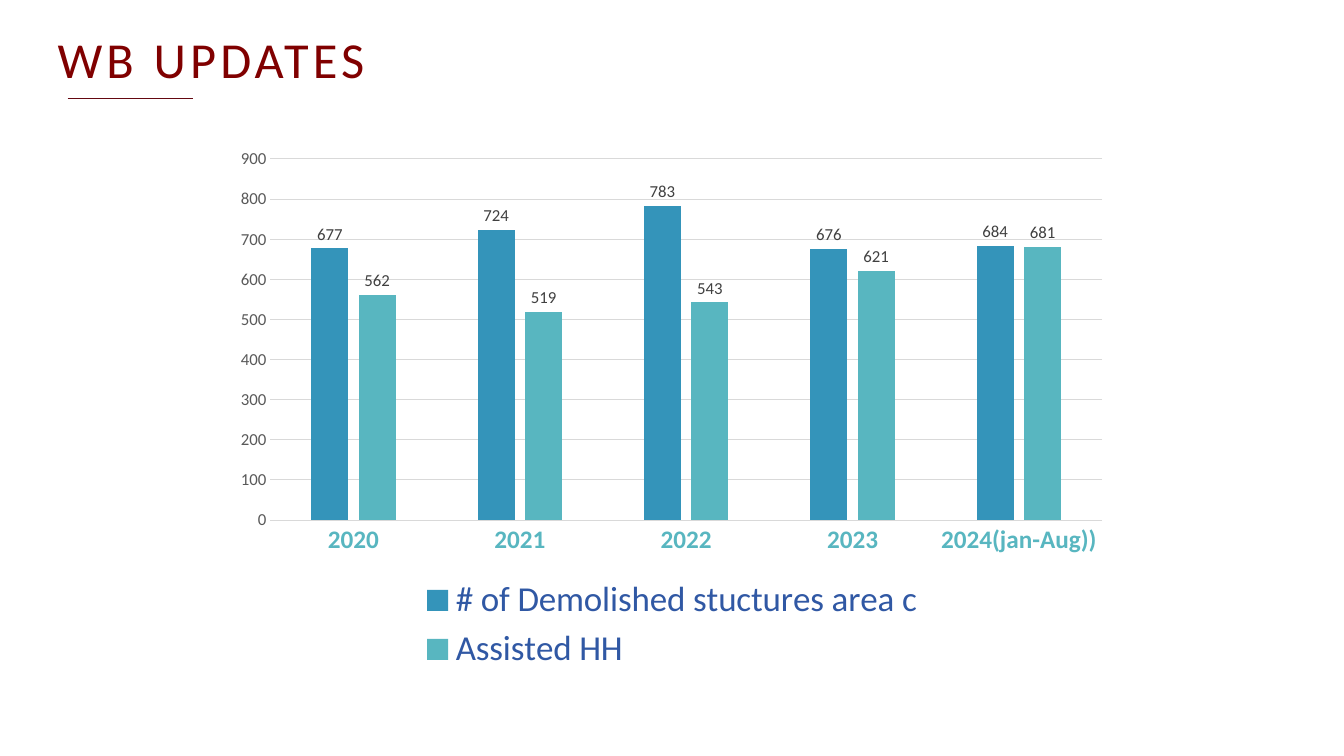
"""Build the WB updates slide with its clustered column chart."""
from dataclasses import dataclass
from typing import Any

from lxml.etree import SubElement
from pptx import Presentation
from pptx.chart.data import CategoryChartData
from pptx.dml.color import RGBColor
from pptx.enum.chart import (
    XL_CHART_TYPE as ChartType,
    XL_LABEL_POSITION as LabelPosition,
    XL_LEGEND_POSITION as LegendPosition,
    XL_TICK_MARK as TickMark,
)
from pptx.enum.shapes import MSO_CONNECTOR as Connector
from pptx.enum.text import MSO_ANCHOR as Anchor, MSO_AUTO_SIZE as AutoSize, PP_ALIGN as Align
from pptx.oxml import parse_xml
from pptx.oxml.ns import nsdecls, qn
from pptx.util import Inches, Pt

WIDTH, HEIGHT = Inches(13.33), Inches(7.5)
FONT = "Calibri"
MAROON = RGBColor(0x80, 0x00, 0x00)
WINE = RGBColor(0x64, 0x08, 0x11)
BLUE = RGBColor(0x34, 0x94, 0xBA)
TEAL = RGBColor(0x58, 0xB6, 0xC0)
NAVY = RGBColor(0x30, 0x58, 0xA4)
GRID_GRAY = RGBColor(0xD9, 0xD9, 0xD9)
AXIS_GRAY = RGBColor(0x59, 0x59, 0x59)
LABEL_GRAY = RGBColor(0x40, 0x40, 0x40)


@dataclass(frozen=True)
class Area:
    """A rectangle given as shares of its container."""

    left: float
    top: float
    width: float
    height: float

    def on_slide(self) -> tuple[int, int, int, int]:
        """Return the rectangle in slide units."""
        return (int(self.left * WIDTH), int(self.top * HEIGHT),
                int(self.width * WIDTH), int(self.height * HEIGHT))


@dataclass(frozen=True)
class Measure:
    """One column series of the chart."""

    name: str
    values: tuple[int, ...]
    color: RGBColor


TITLE_AREA = Area(0.0353, 0.0347, 0.8627, 0.096)
RULE_AREA = Area(0.0503, 0.1307, 0.093, 0)
CHART_AREA = Area(0.1665, 0.184, 0.6669, 0.712)
PLOT_AREA = Area(0.052, 0.037, 0.928, 0.671)
PERIODS = ("2020", "2021", "2022", "2023", "2024(jan-Aug))")
MEASURES = (
    Measure("# of Demolished stuctures area c", (677, 724, 783, 676, 684), BLUE),
    Measure("Assisted HH", (562, 519, 543, 621, 681), TEAL),
)


def style_font(font: Any, size: float, color: RGBColor, bold: bool = False) -> None:
    """Set the typeface, size, colour and weight of a font."""
    font.name, font.size, font.bold = FONT, Pt(size), bold
    font.color.rgb = color


def style_line(line: Any, color: RGBColor, width: float) -> None:
    """Set the colour and width of a line."""
    line.color.rgb = color
    line.width = Pt(width)


def write_title(page: Any, text: str, *, size: float, color: RGBColor, spacing: float) -> None:
    """Place and format the slide title."""
    box = page.shapes.title
    box.left, box.top, box.width, box.height = TITLE_AREA.on_slide()
    frame = box.text_frame
    frame.word_wrap, frame.auto_size = True, AutoSize.NONE
    frame.vertical_anchor = Anchor.MIDDLE
    para = frame.paragraphs[0]
    para.alignment, para.line_spacing = Align.LEFT, 0.9
    span = para.add_run()
    span.text = text
    style_font(span.font, size, color)
    span.font._element.set("spc", str(int(spacing * 100)))


def draw_rule(page: Any) -> None:
    """Draw the short line under the title."""
    left, top, width, _ = RULE_AREA.on_slide()
    rule = page.shapes.add_connector(Connector.STRAIGHT, left, top, left + width, top)
    style_line(rule.line, WINE, 1)
    SubElement(rule._element.spPr, qn("a:effectLst"))


def place_plot(chart: Any, area: Area) -> None:
    """Fix the inner plot rectangle within the chart."""
    plot_area = chart._chartSpace.chart.plotArea
    for layout in plot_area.findall(qn("c:layout")):
        plot_area.remove(layout)
    shares = {"x": area.left, "y": area.top, "w": area.width, "h": area.height}
    modes = '<c:xMode val="edge"/><c:yMode val="edge"/>'
    sides = "".join(f'<c:{side} val="{share}"/>' for side, share in shares.items())
    plot_area.insert(0, parse_xml(
        f'<c:layout {nsdecls("c")}><c:manualLayout><c:layoutTarget val="inner"/>'
        f'{modes}{sides}</c:manualLayout></c:layout>'))


def style_axes(chart: Any) -> None:
    """Format both axes and the gridlines."""
    periods, counts = chart.category_axis, chart.value_axis
    for axis in (periods, counts):
        axis.major_tick_mark = axis.minor_tick_mark = TickMark.NONE
    style_font(periods.tick_labels.font, 18, TEAL, bold=True)
    style_line(periods.format.line, GRID_GRAY, 0.75)
    style_font(counts.tick_labels.font, 12, AXIS_GRAY)
    counts.format.line.fill.background()
    counts.minimum_scale, counts.maximum_scale, counts.major_unit = 0, 900, 100
    counts.has_major_gridlines = True
    style_line(counts.major_gridlines.format.line, GRID_GRAY, 0.75)


def style_series(series: Any, measure: Measure) -> None:
    """Colour the columns of a series and show their values."""
    series.format.fill.solid()
    series.format.fill.fore_color.rgb = measure.color
    series.invert_if_negative = False
    labels = series.data_labels
    labels.show_value = True
    labels.position = LabelPosition.OUTSIDE_END
    style_font(labels.font, 12, LABEL_GRAY)


def draw_chart(page: Any) -> None:
    """Add the column chart with its legend."""
    data = CategoryChartData()
    data.categories = PERIODS
    for measure in MEASURES:
        data.add_series(measure.name, measure.values)
    chart = page.shapes.add_chart(
        ChartType.COLUMN_CLUSTERED, *CHART_AREA.on_slide(), data).chart
    chart.has_title = False
    chart.font.name, chart.font.size = FONT, Pt(10)
    chart.has_legend = True
    chart.legend.position = LegendPosition.BOTTOM
    chart.legend.include_in_layout = False
    style_font(chart.legend.font, 25, NAVY)
    plot = chart.plots[0]
    plot.gap_width, plot.overlap, plot.vary_by_categories = 219, -27, False
    for series, measure in zip(plot.series, MEASURES):
        style_series(series, measure)
    style_axes(chart)
    place_plot(chart, PLOT_AREA)


def main() -> None:
    """Build and save the deck."""
    deck = Presentation()
    deck.slide_width, deck.slide_height = WIDTH, HEIGHT
    page = deck.slides.add_slide(deck.slide_layouts.get_by_name("Title Only"))
    draw_chart(page)
    write_title(page, "WB UPDATES", size=36, color=MAROON, spacing=3)
    draw_rule(page)
    deck.save("out.pptx")


if __name__ == "__main__":
    main()
